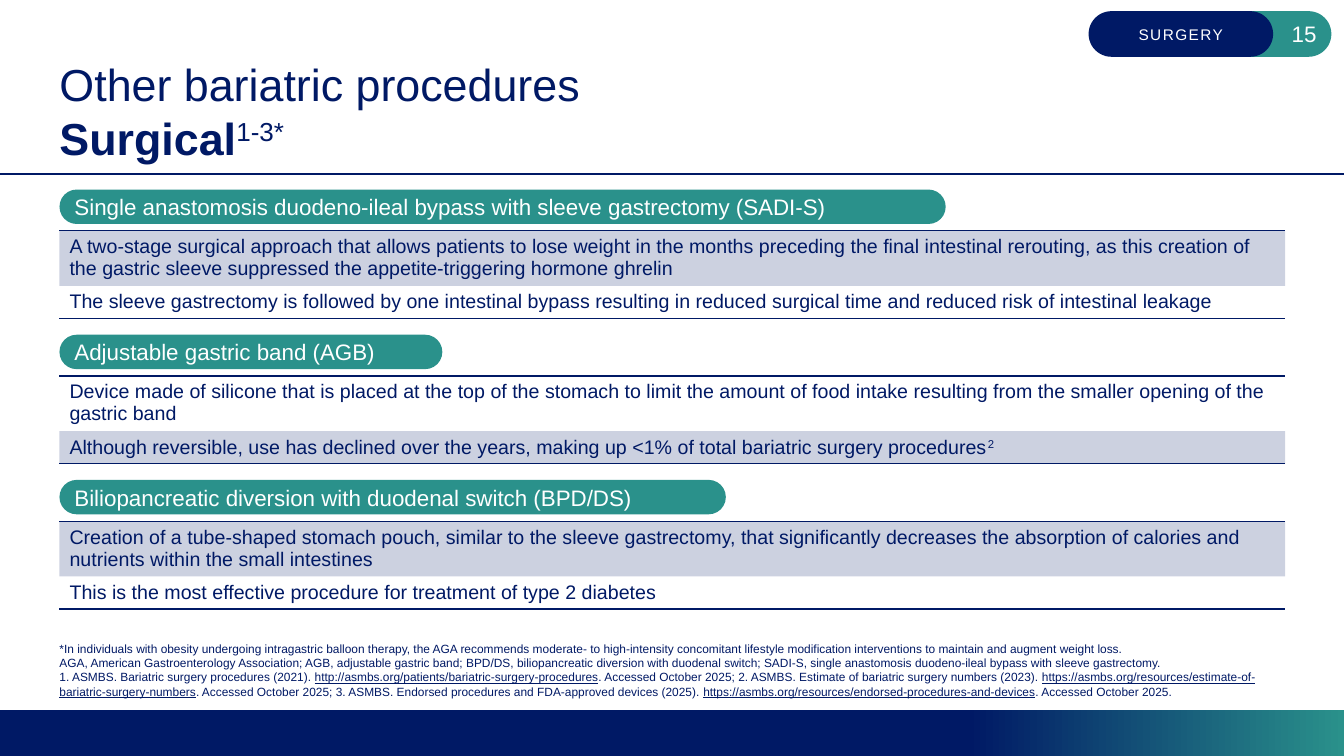
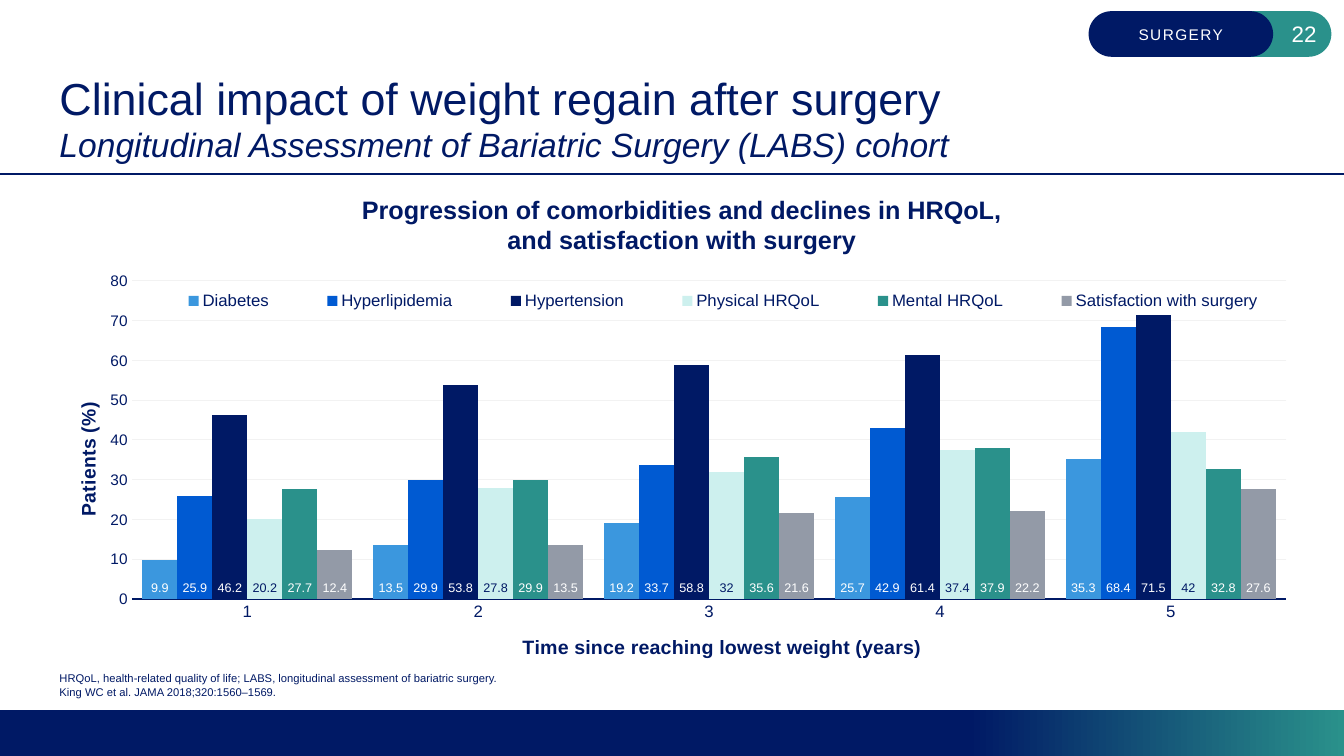
from dataclasses import dataclass
from typing import Sequence

from lxml.etree import SubElement
from pptx import Presentation
from pptx.chart.data import CategoryChartData
from pptx.dml.color import RGBColor
from pptx.enum.chart import XL_CHART_TYPE as ChartType
from pptx.enum.chart import XL_LABEL_POSITION as LabelPosition
from pptx.enum.chart import XL_LEGEND_POSITION as LegendPosition
from pptx.enum.chart import XL_TICK_MARK as TickMark
from pptx.enum.shapes import MSO_CONNECTOR as Connector
from pptx.enum.shapes import MSO_SHAPE as Preset
from pptx.enum.text import MSO_ANCHOR as Anchor
from pptx.enum.text import MSO_AUTO_SIZE as AutoSize
from pptx.enum.text import PP_ALIGN as Align
from pptx.oxml.ns import qn
from pptx.util import Pt

COLOURS = {
    "navy": "001965", "teal": "2A918B", "white": "FFFFFF", "grid": "F2F2F2",
    "sky": "3B97DE", "blue": "005AD2", "mint": "CDF0EE", "grey": "939AA7",
}
FONT = "Arial"
NO_TABLE_STYLE = "{2D5ABB26-0587-4C30-8999-92F81FD0307C}"
PAGE_WIDTH, PAGE_HEIGHT = 960, 540
LEFT = 42.5
PLACEHOLDER_WIDTH = 858.24
CONTENT_TOP = 135.4
FOOTNOTE_BOTTOM = 499


@dataclass(frozen=True)
class Span:
    text: str
    size: float | None = None
    bold: bool = False
    italic: bool = False
    underline: bool = False
    raised: bool = False


@dataclass(frozen=True)
class Procedure:
    name: str
    pill_width: float
    rows: tuple[tuple[Span, ...], tuple[Span, ...]]
    shaded_row: int


@dataclass(frozen=True)
class Measure:
    name: str
    values: tuple[float, ...]
    colour: str
    label_colour: str = "white"


Lines = Sequence[Sequence[Span]]

PROCEDURES = (
    Procedure("Single anastomosis duodeno-ileal bypass with sleeve gastrectomy (SADI-S)", 633, (
        (Span("A two-stage surgical approach that allows patients to lose weight in the months "
              "preceding the final intestinal rerouting, as this creation of the gastric sleeve "
              "suppressed the appetite-triggering hormone ghrelin"),),
        (Span("The sleeve gastrectomy is followed by one intestinal bypass resulting in reduced "
              "surgical time and reduced risk of intestinal leakage"),),
    ), 0),
    Procedure("Adjustable gastric band (AGB)", 273.5, (
        (Span("Device made of silicone that is placed at the top of the stomach to limit the amount "
              "of food intake resulting from the smaller opening of the gastric band"),),
        (Span("Although reversible, use has declined over the years, making up <1% of total "
              "bariatric surgery procedures"), Span("2", raised=True)),
    ), 1),
    Procedure("Biliopancreatic diversion with duodenal switch (BPD/DS)", 476, (
        (Span("Creation of a tube-shaped stomach pouch, similar to the sleeve gastrectomy, that "
              "significantly decreases the absorption of calories and nutrients within the small "
              "intestines"),),
        (Span("This is the most effective procedure for treatment of type 2 diabetes"),),
    ), 0),
)

PROCEDURE_NOTES = (
    (Span("*In individuals with obesity undergoing intragastric balloon therapy, the AGA recommends "
          "moderate- to high-intensity concomitant lifestyle modification interventions to maintain "
          "and augment weight loss."),),
    (Span("AGA, American Gastroenterology Association; AGB, adjustable gastric band; BPD/DS, "
          "biliopancreatic diversion with duodenal switch; SADI-S, single anastomosis duodeno-ileal "
          "bypass with sleeve gastrectomy."),),
    (Span("1. ASMBS. Bariatric surgery procedures (2021). "),
     Span("http://asmbs.org/patients/bariatric-surgery-procedures", underline=True),
     Span(". Accessed October 2025; 2. ASMBS. Estimate of bariatric surgery numbers (2023). "),
     Span("https://asmbs.org/resources/estimate-of-bariatric-surgery-numbers", underline=True),
     Span(". Accessed October 2025; 3. ASMBS. Endorsed procedures and FDA-approved devices (2025). "),
     Span("https://asmbs.org/resources/endorsed-procedures-and-devices", underline=True),
     Span(". Accessed October 2025.")),
)
COHORT_NOTES = (
    (Span("HRQoL, health-related quality of life; LABS, longitudinal assessment of bariatric surgery."),),
    (Span("King WC et al. JAMA 2018;320:1560–1569."),),
)

YEARS = ("1", "2", "3", "4", "5")
MEASURES = (
    Measure("Diabetes", (9.9, 13.5, 19.2, 25.7, 35.3), "sky"),
    Measure("Hyperlipidemia", (25.9, 29.9, 33.7, 42.9, 68.4), "blue"),
    Measure("Hypertension", (46.2, 53.8, 58.8, 61.4, 71.5), "navy"),
    Measure("Physical HRQoL", (20.2, 27.8, 32, 37.4, 42), "mint", "navy"),
    Measure("Mental HRQoL", (27.7, 29.9, 35.6, 37.9, 32.8), "teal"),
    Measure("Satisfaction with surgery", (12.4, 13.5, 21.6, 22.2, 27.6), "grey"),
)


def rgb(colour: str) -> RGBColor:
    return RGBColor.from_string(COLOURS[colour])


def style_font(font, size: float, colour: str = "navy", bold: bool = False) -> None:
    font.name, font.size, font.bold = FONT, Pt(size), bold
    font.color.rgb = rgb(colour)


def write(paragraph, lines: Lines, size: float, colour: str = "navy") -> None:
    """Add the spans run by run, with a line break between lines."""
    for number, line in enumerate(lines):
        if number:
            paragraph.add_line_break()
            break_format = SubElement(paragraph._p[-1], qn("a:rPr"))
            break_format.set("sz", str(int(size * 100)))
        for span in line:
            run = paragraph.add_run()
            run.text = span.text
            style_font(run.font, span.size or size, colour, span.bold)
            run.font.italic = span.italic
            run.font.underline = span.underline
            if span.raised:
                run._r.get_or_add_rPr().set("baseline", "30000")


def fill_placeholder(holder, top: float, height: float, lines: Lines, size: float) -> None:
    holder.left, holder.top = Pt(LEFT), Pt(top)
    holder.width, holder.height = Pt(PLACEHOLDER_WIDTH), Pt(height)
    frame = holder.text_frame
    frame.word_wrap, frame.auto_size = True, AutoSize.NONE
    frame.vertical_anchor = Anchor.BOTTOM
    frame.margin_left = frame.margin_top = frame.margin_right = frame.margin_bottom = 0
    paragraph = frame.paragraphs[0]
    properties = paragraph._p.get_or_add_pPr()
    properties.set("marL", "0")
    properties.set("indent", "0")
    SubElement(properties, qn("a:buNone"))
    paragraph.alignment = Align.LEFT
    paragraph.space_before = Pt(0)
    write(paragraph, lines, size)


def add_pill(slide, left: float, top: float, width: float, height: float, colour: str,
             text: str, size: float, align: Align = Align.LEFT):
    pill = slide.shapes.add_shape(Preset.ROUNDED_RECTANGLE, Pt(left), Pt(top), Pt(width), Pt(height))
    pill.adjustments[0] = 0.5
    pill.shadow.inherit = False
    pill.fill.solid()
    pill.fill.fore_color.rgb = rgb(colour)
    pill.line.fill.background()
    pill.text_frame.vertical_anchor = Anchor.MIDDLE
    paragraph = pill.text_frame.paragraphs[0]
    paragraph.alignment = align
    write(paragraph, [[Span(text)]], size, "white")
    return pill


def add_tab(slide, left: float, colour: str, text: str, size: float, align: Align):
    tab = add_pill(slide, left, 8, 131.8, 32.6, colour, text, size, align)
    frame = tab.text_frame
    frame.margin_left = frame.margin_right = Pt(5.8)
    frame.margin_top = frame.margin_bottom = Pt(2.9)
    return tab


def start_slide(deck, number: int, title: Lines, notes: Lines, note_size: float, note_height: float):
    """Add a slide with the band, rule, section tabs, title and footnotes."""
    slide = deck.slides.add_slide(deck.slide_layouts[1])
    fill_placeholder(slide.shapes.title, 32.4, 85, title, 32)
    fill_placeholder(slide.placeholders[1], FOOTNOTE_BOTTOM - note_height, note_height, notes, note_size)

    band_top = 507.4
    band = slide.shapes.add_shape(Preset.RECTANGLE, 0, Pt(band_top), Pt(PAGE_WIDTH),
                                  Pt(PAGE_HEIGHT - band_top))
    band.shadow.inherit = False
    band.line.fill.background()
    band.fill.gradient()
    band.fill.gradient_angle = 0
    for stop, (position, colour) in zip(band.fill.gradient_stops, ((0.72, "navy"), (1, "teal"))):
        stop.position, stop.color.rgb = position, rgb(colour)

    rule = slide.shapes.add_connector(Connector.STRAIGHT, 0, Pt(124), Pt(PAGE_WIDTH), Pt(124))
    rule.line.color.rgb, rule.line.width = rgb("navy"), Pt(1.5)
    SubElement(rule._element.spPr, qn("a:effectLst"))

    add_tab(slide, 819.2, "teal", str(number), 16, Align.RIGHT)
    section = add_tab(slide, 777.6, "navy", "SURGERY", 11, Align.CENTER)
    section.text_frame.paragraphs[0].runs[0]._r.get_or_add_rPr().set("spc", "100")
    return slide


def add_border(cell, side: str) -> None:
    properties = cell._tc.get_or_add_tcPr()
    border = SubElement(properties, qn(f"a:{side}"), w=str(Pt(1)))
    SubElement(SubElement(border, qn("a:solidFill")), qn("a:srgbClr"), val=COLOURS["navy"])
    properties.insert(0, border)


def add_procedure(slide, procedure: Procedure, top: float) -> None:
    row_heights = (39.4, 23.3)
    width = 875.5
    table = slide.shapes.add_table(2, 1, Pt(LEFT), Pt(top + 29.5), Pt(width), Pt(sum(row_heights))).table
    table.first_row = table.horz_banding = False
    table._tbl.tblPr.find(qn("a:tableStyleId")).text = NO_TABLE_STYLE
    for index, (height, spans, side) in enumerate(zip(row_heights, procedure.rows, ("lnT", "lnB"))):
        table.rows[index].height = Pt(height)
        cell = table.cell(index, 0)
        write(cell.text_frame.paragraphs[0], [spans], 14)
        if index == procedure.shaded_row:
            cell.fill.solid()
            cell.fill.fore_color.rgb = rgb("navy")
            shade = cell._tc.tcPr.find(f".//{qn('a:srgbClr')}")
            SubElement(shade, qn("a:alpha"), val="20000")
        else:
            cell.fill.background()
        add_border(cell, side)
    add_pill(slide, LEFT, top, procedure.pill_width, 24.6, "teal", procedure.name, 16)


def place(part, inner: bool = False, **fractions: float) -> None:
    """Give a chart part a manual position in fractions of the chart."""
    old = part.find(qn("c:layout"))
    if old is not None:
        part.remove(old)
    leading = {qn("c:tx"), qn("c:legendPos")}
    layout = SubElement(part, qn("c:layout"))
    part.insert(sum(child.tag in leading for child in part), layout)
    manual = SubElement(layout, qn("c:manualLayout"))
    if inner:
        SubElement(manual, qn("c:layoutTarget"), val="inner")
    for axis in ("x", "y"):
        SubElement(manual, qn(f"c:{axis}Mode"), val="edge")
    for key, value in fractions.items():
        SubElement(manual, qn(f"c:{key}"), val=str(value))


def style_axis(axis, title: str, size: float, x: float, y: float) -> None:
    axis.major_tick_mark = axis.minor_tick_mark = TickMark.NONE
    style_font(axis.tick_labels.font, size)
    paragraph = axis.axis_title.text_frame.paragraphs[0]
    write(paragraph, [[Span(title, bold=True)]], 14)
    place(axis.axis_title._element, x=x, y=y)


def add_progression_chart(slide) -> None:
    data = CategoryChartData()
    data.categories = YEARS
    for measure in MEASURES:
        data.add_series(measure.name, measure.values)
    chart = slide.shapes.add_chart(ChartType.COLUMN_CLUSTERED, Pt(33.1), Pt(186.5), Pt(912.2),
                                   Pt(288), data).chart
    style_font(chart.font, 9)
    chart.has_title = False
    plot = chart.plots[0]
    plot.gap_width, plot.overlap, plot.vary_by_categories = 60, 0, False
    for series, measure in zip(plot.series, MEASURES):
        series.format.fill.solid()
        series.format.fill.fore_color.rgb = rgb(measure.colour)
        labels = series.data_labels
        labels.show_value, labels.position = True, LabelPosition.INSIDE_BASE
        style_font(labels.font, 9, measure.label_colour)

    years, patients = chart.category_axis, chart.value_axis
    style_axis(years, "Time since reaching lowest weight (years)", 12, 0.37, 0.93)
    years.format.line.color.rgb, years.format.line.width = rgb("navy"), Pt(0.75)
    style_axis(patients, "Patients (%)", 11, 0.02, 0.35)
    patients.minimum_scale, patients.maximum_scale, patients.major_unit = 0, 80, 10
    patients.format.line.fill.background()
    grid = patients.major_gridlines.format.line
    grid.color.rgb, grid.width = rgb("grid"), Pt(0.75)

    chart.has_legend = True
    chart.legend.position = LegendPosition.RIGHT
    chart.legend.include_in_layout = False
    style_font(chart.legend.font, 12)
    place(chart.legend._element, x=0.07, y=0.06, w=0.92, h=0.08)
    place(plot._element.getparent(), inner=True, x=0.067, y=0.05, w=0.904, h=0.8)


def add_chart_heading(slide) -> None:
    heading = slide.shapes.add_textbox(Pt(247), Pt(CONTENT_TOP), Pt(480), Pt(51))
    heading.text_frame.word_wrap = True
    paragraph = heading.text_frame.paragraphs[0]
    paragraph.alignment = Align.CENTER
    write(paragraph, [[Span("Progression of comorbidities and declines in HRQoL, and satisfaction "
                            "with surgery", bold=True)]], 18)


def main() -> None:
    deck = Presentation()
    deck.slide_width, deck.slide_height = Pt(PAGE_WIDTH), Pt(PAGE_HEIGHT)

    procedures = start_slide(deck, 15, (
        (Span("Other bariatric procedures"),),
        (Span("Surgical", bold=True), Span("1-3*", raised=True)),
    ), PROCEDURE_NOTES, 8.5, 57.6)
    for index, procedure in enumerate(PROCEDURES):
        add_procedure(procedures, procedure, CONTENT_TOP + index * 103.7)

    regain = start_slide(deck, 22, (
        (Span("Clinical impact of weight regain after surgery"),),
        (Span("Longitudinal Assessment of Bariatric Surgery (LABS) cohort", 24, italic=True),),
    ), COHORT_NOTES, 8, 25.2)
    add_progression_chart(regain)
    add_chart_heading(regain)

    deck.save("out.pptx")


if __name__ == "__main__":
    main()
